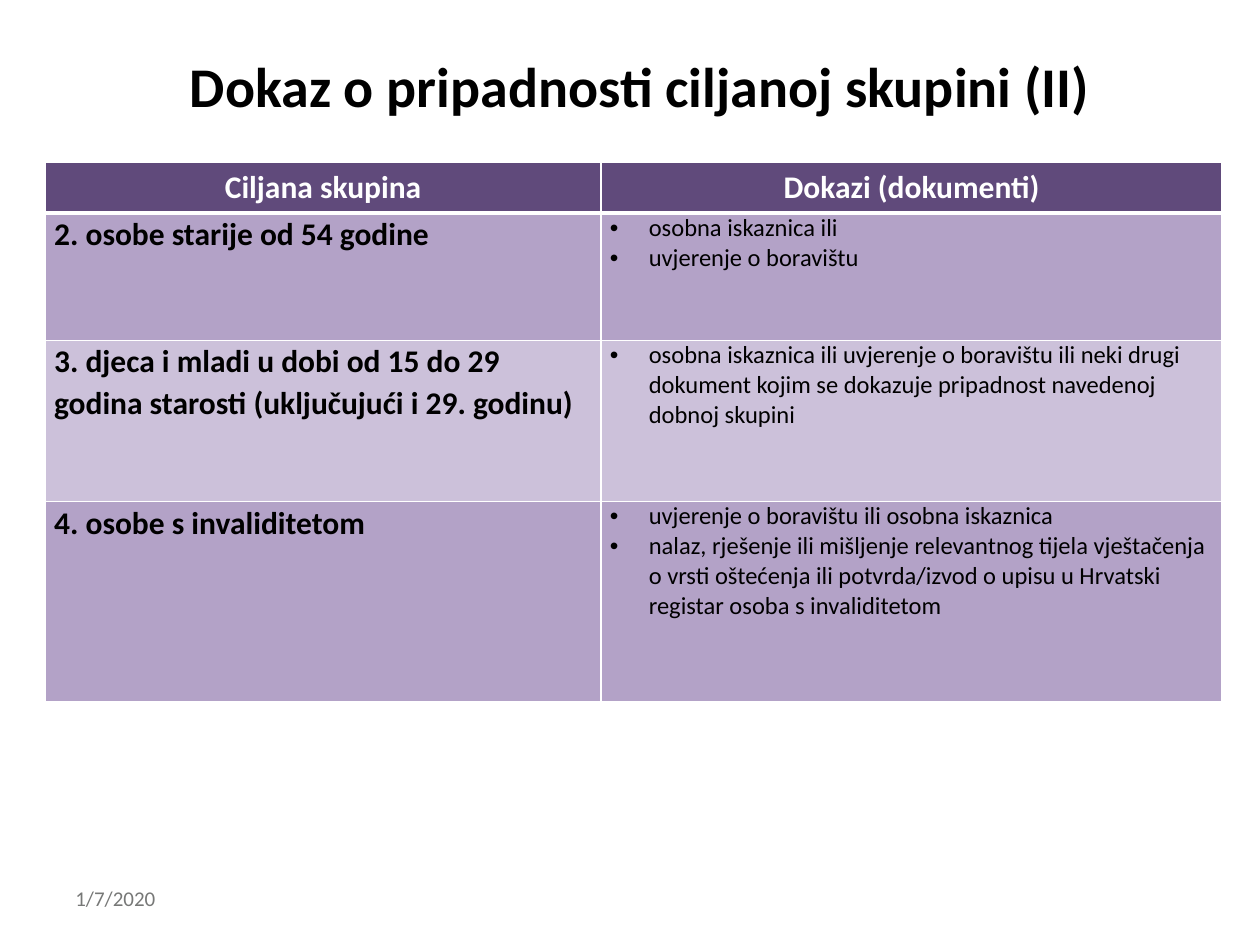
from lxml.etree import SubElement
from pptx import Presentation
from pptx.dml.color import RGBColor
from pptx.enum.text import MSO_ANCHOR as Anchor, PP_ALIGN as Align
from pptx.oxml.ns import qn
from pptx.util import Inches, Pt

BLACK = RGBColor(0x00, 0x00, 0x00)
WHITE = RGBColor(0xFF, 0xFF, 0xFF)
GRAY = RGBColor(0x77, 0x78, 0x77)
HEADER_PURPLE = RGBColor(0x60, 0x4A, 0x7B)
BAND_FILLS = (RGBColor(0xB3, 0xA2, 0xC7), RGBColor(0xCC, 0xC1, 0xDA))

COLUMN_WIDTHS = (4.41, 4.93)
ROW_HEIGHTS = (0.38, 1.01, 1.28, 1.59)
HEADINGS = ("Ciljana skupina", "Dokazi (dokumenti)")
GROUPS = (
    ("2. osobe starije od 54 godine",
     ("osobna iskaznica ili", "uvjerenje o boravištu")),
    ("3. djeca i mladi u dobi od 15 do 29 godina starosti (uključujući i 29. godinu)",
     ("osobna iskaznica ili uvjerenje o boravištu ili neki drugi dokument "
      "kojim se dokazuje pripadnost navedenoj dobnoj skupini",)),
    ("4. osobe s invaliditetom",
     ("uvjerenje o boravištu ili osobna iskaznica",
      "nalaz, rješenje ili mišljenje relevantnog tijela vještačenja o vrsti "
      "oštećenja ili potvrda/izvod o upisu u Hrvatski registar osoba s invaliditetom")),
)


def add_bullet(paragraph):
    """Give a paragraph a round bullet with a hanging indent."""
    properties = paragraph._p.get_or_add_pPr()
    properties.set("marL", str(Inches(0.31)))
    properties.set("indent", str(-Inches(0.31)))
    SubElement(properties, qn("a:buFont"), typeface="Arial")
    SubElement(properties, qn("a:buChar"), char="•")


def write_text(frame, *lines, size=18, color=BLACK, bold=False,
               align=Align.LEFT, spacing=None, bullets=False):
    """Write each line as a formatted paragraph of a text frame."""
    for index, line in enumerate(lines):
        paragraph = frame.add_paragraph() if index else frame.paragraphs[0]
        paragraph.alignment = align
        if spacing:
            paragraph.line_spacing = spacing
        if bullets:
            add_bullet(paragraph)
        run = paragraph.add_run()
        run.text = line
        run.font.name = "Calibri"
        run.font.size = Pt(size)
        run.font.bold = bold
        run.font.color.rgb = color


def add_label(slide, text, left, top, width, height, anchor=Anchor.TOP, **style):
    """Add a wrapped text box."""
    box = slide.shapes.add_textbox(
        Inches(left), Inches(top), Inches(width), Inches(height))
    box.text_frame.word_wrap = True
    box.text_frame.vertical_anchor = anchor
    write_text(box.text_frame, text, **style)


def style_cell(cell, fill, bottom_width=1):
    """Set the white borders and the fill of a cell."""
    properties = cell._tc.get_or_add_tcPr()
    for side, width in (("L", 1), ("R", 1), ("T", 1), ("B", bottom_width)):
        border = SubElement(properties, qn(f"a:ln{side}"), w=str(Pt(width)))
        paint = SubElement(border, qn("a:solidFill"))
        SubElement(paint, qn("a:srgbClr"), val=str(WHITE))
    cell.fill.solid()
    cell.fill.fore_color.rgb = fill


def add_evidence_table(slide):
    """Add the table of target groups and their documents."""
    table = slide.shapes.add_table(
        len(ROW_HEIGHTS), len(COLUMN_WIDTHS), Inches(0.36), Inches(1.29),
        Inches(sum(COLUMN_WIDTHS)), Inches(sum(ROW_HEIGHTS))).table
    for column, width in zip(table.columns, COLUMN_WIDTHS):
        column.width = Inches(width)
    for row, height in zip(table.rows, ROW_HEIGHTS):
        row.height = Inches(height)
    for column, heading in enumerate(HEADINGS):
        cell = table.cell(0, column)
        style_cell(cell, HEADER_PURPLE, bottom_width=3)
        write_text(cell.text_frame, heading, color=WHITE, bold=True, align=Align.CENTER)
    for index, (group, documents) in enumerate(GROUPS):
        group_cell, documents_cell = table.rows[index + 1].cells
        for cell in (group_cell, documents_cell):
            style_cell(cell, BAND_FILLS[index % 2])
            cell.margin_left = cell.margin_right = Inches(0.07)
            cell.margin_top = cell.margin_bottom = 0
        write_text(group_cell.text_frame, group, bold=True, spacing=1.07)
        write_text(documents_cell.text_frame, *documents, size=14, bullets=True)


def main():
    """Build and save the slide."""
    deck = Presentation()
    deck.slide_width, deck.slide_height = Inches(10), Inches(7.5)
    slide = deck.slides.add_slide(deck.slide_layouts[6])
    add_label(slide, "1/7/2020", 0.5, 6.98, 2.33, 0.4, size=12, color=GRAY)
    add_label(slide, "Dokaz o pripadnosti ciljanoj skupini (II)", 0.66, 0.3, 8.84, 0.75,
              anchor=Anchor.MIDDLE, size=32, bold=True, align=Align.CENTER)
    add_evidence_table(slide)
    deck.save("out.pptx")


if __name__ == "__main__":
    main()
